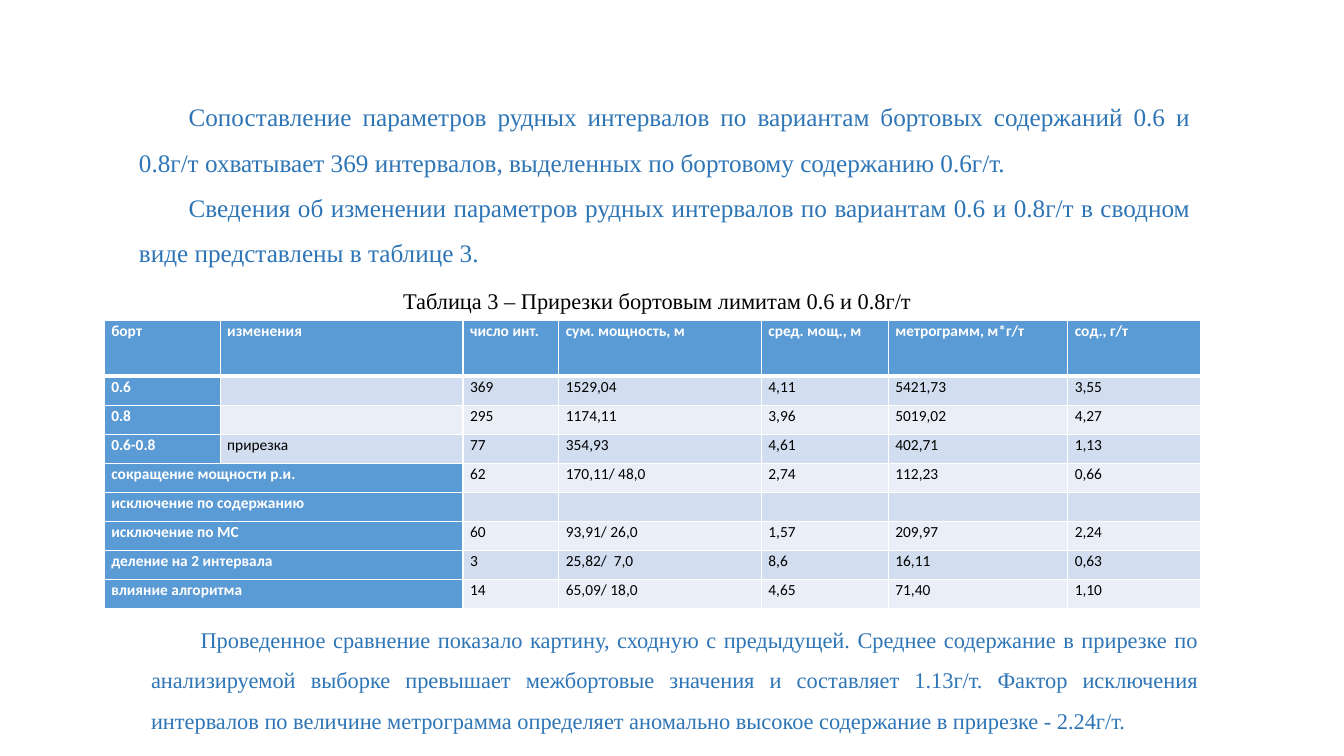
from pptx import Presentation
from pptx.util import Pt
from pptx.dml.color import RGBColor
from pptx.enum.text import PP_ALIGN
from pptx.oxml import parse_xml
from pptx.oxml.ns import nsdecls

BLUE, WHITE, BLACK = "5B9BD5", "FFFFFF", "000000"
BANDS = ["EAEFF7", "D2DEEF"]


def color(code):
    return RGBColor.from_string(code)


def add_text(box, size, code, align, lines, indent=0, spacing=1.0):
    frame = slide.shapes.add_textbox(*[Pt(v) for v in box]).text_frame
    frame.word_wrap = True
    frame.text = "\n".join(lines)
    for para in frame.paragraphs:
        para.alignment = align
        para.line_spacing = spacing
        para.font.size = Pt(size)
        para.font.name = "Times New Roman"
        para.font.color.rgb = color(code)
        if indent:
            para._p.get_or_add_pPr().set("indent", str(Pt(indent)))


deck = Presentation()
deck.slide_width, deck.slide_height = Pt(960), Pt(540)
slide = deck.slides.add_slide(deck.slide_layouts[6])

# Introduction and table caption
add_text((92.2, 58.3, 765.4, 134.6), 18, "2E75B6", PP_ALIGN.JUSTIFY, [
    "Сопоставление параметров рудных интервалов по вариантам бортовых содержаний "
    "0.6 и 0.8г/т охватывает 369 интервалов, выделенных по бортовому содержанию 0.6г/т.",
    "Сведения об изменении параметров рудных интервалов по вариантам "
    "0.6 и 0.8г/т в сводном виде представлены в таблице 3.",
], 35.4, 1.5)
add_text((100.8, 201.6, 737.3, 26.6), 16, BLACK, PP_ALIGN.CENTER,
         ["Таблица 3 – Прирезки бортовым лимитам 0.6 и 0.8г/т"])

# Table data
rows = [
    ["борт", "изменения", "число инт. ", "сум. мощность, м ", "сред. мощ., м",
     "метрограмм, м*г/т", "сод., г/т"],
    ["0.6", "", "369", "1529,04", "4,11", "5421,73", "3,55"],
    ["0.8", "", "295", "1174,11", "3,96", "5019,02", "4,27"],
    ["0.6-0.8", "прирезка", "77", "354,93", "4,61", "402,71", "1,13"],
    ["сокращение мощности р.и.", "", "62", "170,11/ 48,0", "2,74", "112,23", "0,66"],
    ["исключение по содержанию", "", "", "", "", "", ""],
    ["исключение по МС", "", "60", "93,91/ 26,0", "1,57", "209,97", "2,24"],
    ["деление на 2 интервала", "", "3", "25,82/  7,0", "8,6", "16,11", "0,63"],
    ["влияние алгоритма", "", "14", "65,09/ 18,0", "4,65", "71,40", "1,10"],
]
widths = [82.8, 173.5, 68.4, 144.7, 90.7, 128.2, 95]

# Table grid
table = slide.shapes.add_table(len(rows), len(widths), Pt(74.5), Pt(229),
                               Pt(sum(widths)), Pt(205.6)).table
table.first_col = True
for col, width in zip(table.columns, widths):
    col.width = Pt(width)
for r, row in enumerate(rows):
    table.rows[r].height = Pt(20.75 if r else 39.6)
    for c, text in enumerate(row):
        cell = table.cell(r, c)
        head = r == 0 or c == 0
        cell.margin_left = cell.margin_right = Pt(5)
        cell.margin_top = cell.margin_bottom = 0

        # White borders, thicker under the header
        for side in "LRTB":
            thick = (r, side) in [(0, "B"), (1, "T")]
            cell._tc.get_or_add_tcPr().append(parse_xml(
                f'<a:ln{side} {nsdecls("a")} w="{Pt(3 if thick else 1)}"><a:solidFill>'
                f'<a:srgbClr val="{WHITE}"/></a:solidFill></a:ln{side}>'))
        cell.fill.solid()
        cell.fill.fore_color.rgb = color(BLUE if head else BANDS[r % 2])

        # Cell text
        cell.text = text
        para = cell.text_frame.paragraphs[0]
        para.alignment = PP_ALIGN.JUSTIFY
        para.line_spacing = 1.07
        para.font.size = Pt(11)
        para.font.name = "Calibri"
        para.font.bold = head
        para.font.color.rgb = color(WHITE if head else BLACK)

# Wide row labels
for r in range(4, len(rows)):
    table.cell(r, 0).merge(table.cell(r, 1))

# Conclusion
add_text((100.8, 434.2, 762.5, 91.4), 16, "2E75B6", PP_ALIGN.JUSTIFY, [
    "Проведенное сравнение показало картину, сходную с предыдущей. Среднее содержание "
    "в прирезке по анализируемой выборке превышает межбортовые значения и составляет "
    "1.13г/т. Фактор исключения интервалов по величине метрограмма определяет "
    "аномально высокое содержание в прирезке - 2.24г/т.",
], 35.4, 1.5)

deck.save("out.pptx")
